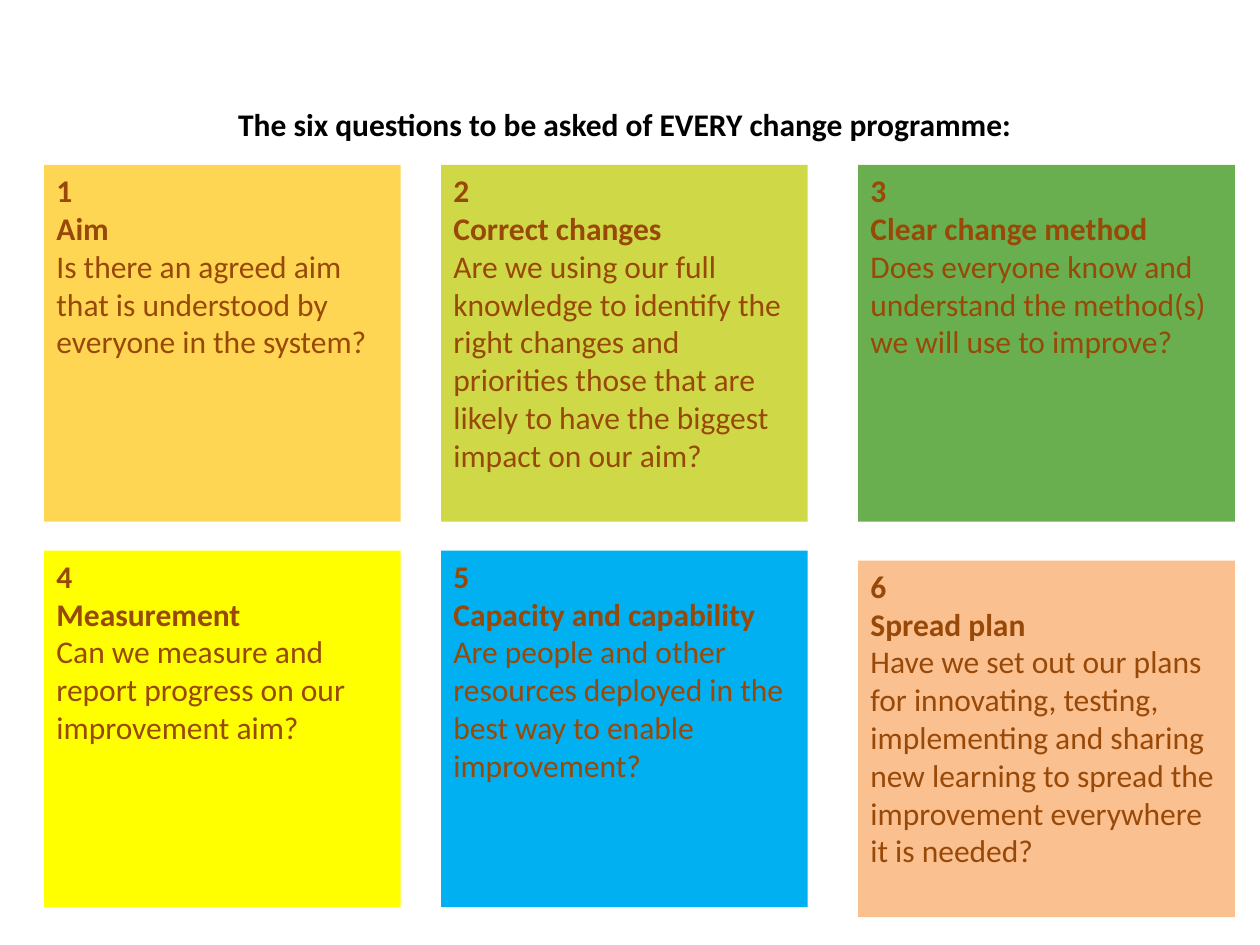
from pptx import Presentation
from pptx.dml.color import RGBColor
from pptx.enum.shapes import MSO_SHAPE as Shape
from pptx.enum.text import MSO_ANCHOR as Anchor, PP_ALIGN as Align
from pptx.util import Inches, Pt

COLS = [(0.35, 2.83), (3.5, 2.91), (6.81, 2.99)]
TOPS = [1.31, 4.37]
SIDE = 2.83
DROP = 0.08
INK = "984807"
CARDS = [
    ("FFD653", "Aim",
     "Is there an agreed aim that is understood by everyone in the system?"),
    ("CFD947", "Correct changes",
     "Are we using our full knowledge to identify the right changes and "
     "priorities those that are likely to have the biggest impact on our aim?"),
    ("6AAF4F", "Clear change method",
     "Does everyone know and understand the method(s) we will use to improve?"),
    ("FFFF00", "Measurement",
     "Can we measure and report progress on our improvement aim?"),
    ("00B0F0", "Capacity and capability",
     "Are people and other resources deployed in the best way to enable improvement?"),
    ("FAC090", "Spread plan",
     "Have we set out our plans for innovating, testing, implementing and "
     "sharing new learning to spread the improvement everywhere it is needed?"),
]


def color(code):
    """Turn a hex string into a colour."""
    return RGBColor.from_string(code)


def add_run(para, text, ink, bold, align=Align.LEFT):
    """Add one styled run to a paragraph."""
    para.alignment = align
    run = para.add_run()
    run.text = text
    run.font.name = "Calibri"
    run.font.size = Pt(18)
    run.font.bold = bold
    run.font.color.rgb = color(ink)


def add_title(slide, box, text):
    """Place the centred heading in its box."""
    frame = slide.shapes.add_textbox(*map(Inches, box)).text_frame
    frame.word_wrap = True
    frame.vertical_anchor = Anchor.MIDDLE
    add_run(frame.paragraphs[0], text, "000000", True, Align.CENTER)


def add_card(slide, box, fill, num, head, ask):
    """Place one numbered question card in its box."""
    card = slide.shapes.add_shape(Shape.RECTANGLE, *map(Inches, box))
    card.shadow.inherit = False
    card.fill.solid()
    card.fill.fore_color.rgb = color(fill)
    card.line.fill.background()
    frame = card.text_frame
    frame.word_wrap = True
    frame.vertical_anchor = Anchor.TOP
    for i, (text, bold) in enumerate([(str(num), True), (head, True), (ask, False)]):
        para = frame.add_paragraph() if i else frame.paragraphs[0]
        add_run(para, text, INK, bold)


def add_grid(slide):
    """Place the six cards in two rows of three, the last one set lower."""
    for i, (fill, head, ask) in enumerate(CARDS):
        row, col = divmod(i, len(COLS))
        left, width = COLS[col]
        top = TOPS[row] + (DROP if i == len(CARDS) - 1 else 0)
        add_card(slide, (left, top, width, SIDE), fill, i + 1, head, ask)


def main():
    """Build and save the slide."""
    deck = Presentation()
    deck.slide_width, deck.slide_height = Inches(10), Inches(7.5)
    slide = deck.slides.add_slide(deck.slide_layouts[6])
    add_title(slide, (0.67, 0.68, 8.58, 0.6),
              "The six questions to be asked of EVERY change programme:")
    add_grid(slide)
    deck.save("out.pptx")


if __name__ == "__main__":
    main()
